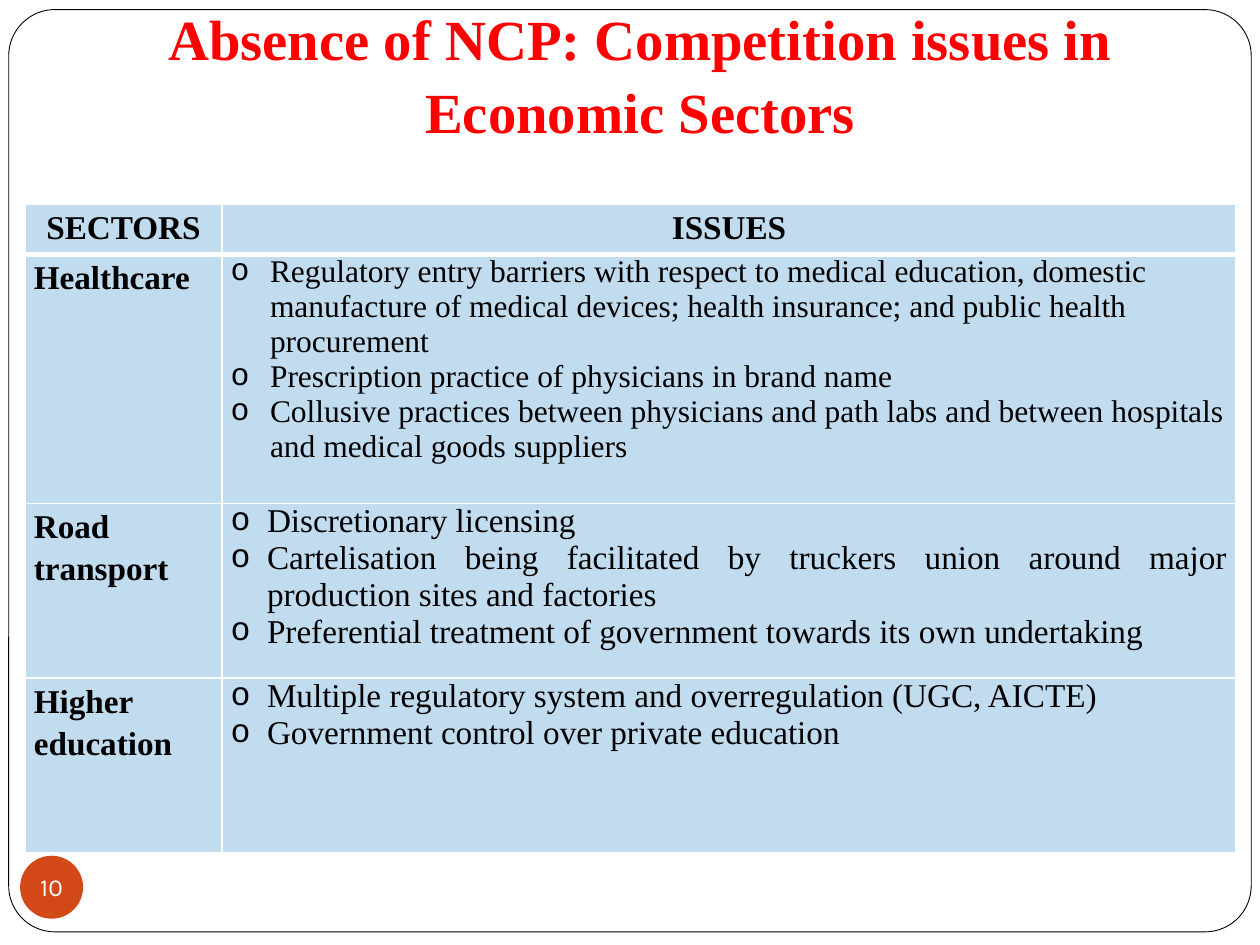
from dataclasses import dataclass

from lxml.etree import SubElement
from pptx import Presentation
from pptx.dml.color import RGBColor
from pptx.enum.shapes import MSO_SHAPE
from pptx.enum.text import MSO_ANCHOR, PP_ALIGN
from pptx.oxml import parse_xml
from pptx.oxml.ns import nsdecls, qn
from pptx.util import Pt


@dataclass(frozen=True)
class Theme:
    red: str = "FF0000"
    black: str = "000000"
    white: str = "FFFFFF"
    badge: str = "D34817"
    blue: str = "0070C0"
    tint: int = 24
    serif: str = "Times New Roman"
    sans: str = "Karla"
    mono: str = "Courier New"
    title: float = 32.4
    label: float = 19
    small: float = 18
    page: float = 14


THEME = Theme()
COLS = (112.4, 579.6)
ROWS = (28.8, 142, 100, 100)
HEADS = ("SECTORS", "ISSUES")
SECTORS = (
    ("Healthcare", THEME.small, 22.5, PP_ALIGN.LEFT, (
        "Regulatory entry barriers with respect to medical education, domestic "
        "manufacture of medical devices; health insurance; and public health "
        "procurement",
        "Prescription practice of physicians in brand name",
        "Collusive practices between physicians and path labs and between "
        "hospitals and medical goods suppliers",
    )),
    ("Road transport", THEME.label, 20.8, PP_ALIGN.JUSTIFY, (
        "Discretionary licensing",
        "Cartelisation being facilitated by truckers union around major "
        "production sites and factories",
        "Preferential treatment of government towards its own undertaking",
    )),
    ("Higher education", THEME.label, 20.8, PP_ALIGN.JUSTIFY, (
        "Multiple regulatory system and overregulation (UGC, AICTE)",
        "Government control over private education",
    )),
)


def color(code):
    return RGBColor.from_string(code)


def add_run(para, text, size, font=THEME.serif, ink=THEME.black, bold=False):
    run = para.add_run()
    run.text = text
    run.font.size = Pt(size)
    run.font.name = font
    run.font.bold = bold
    run.font.color.rgb = color(ink)


def set_frame(frame, pads, anchor, wrap):
    frame.margin_left, frame.margin_top = Pt(pads[0]), Pt(pads[1])
    frame.margin_right, frame.margin_bottom = Pt(pads[2]), Pt(pads[3])
    frame.vertical_anchor = anchor
    frame.word_wrap = wrap
    para = frame.paragraphs[0]
    para.alignment = PP_ALIGN.CENTER
    return para


def add_form(slide, kind, box, fill):
    form = slide.shapes.add_shape(kind, *map(Pt, box))
    form.shadow.inherit = False
    form.fill.solid()
    form.fill.fore_color.rgb = color(fill)
    form.line.fill.background()
    return form


def add_panel(slide):
    panel = add_form(slide, MSO_SHAPE.ROUNDED_RECTANGLE, (5, 5.5, 710, 527), THEME.white)
    panel.adjustments[0] = 0.05
    panel.line.color.rgb = color(THEME.black)
    panel.line.width = Pt(0.5)


def add_title(slide):
    box = slide.shapes.add_textbox(Pt(31), Pt(0), Pt(669.6), Pt(90))
    para = set_frame(box.text_frame, (7.2, 3.6, 7.2, 7.2), MSO_ANCHOR.BOTTOM, True)
    para.line_spacing = 1.08
    add_run(para, "Absence of NCP: Competition issues in Economic Sectors",
            THEME.title, ink=THEME.red, bold=True)


def add_badge(slide):
    badge = add_form(slide, MSO_SHAPE.OVAL, (11.5, 489, 36, 36), THEME.badge)
    para = set_frame(badge.text_frame, (0, 0, 0, 0), MSO_ANCHOR.MIDDLE, False)
    add_run(para, "10", THEME.page, THEME.sans, THEME.white)


def style_cell(cell, edges):
    cell.margin_left = cell.margin_right = Pt(5)
    cell.margin_top = cell.margin_bottom = Pt(0)
    cell.fill.solid()
    cell.fill.fore_color.rgb = color(THEME.blue)
    props = cell._tc.get_or_add_tcPr()
    tone = props.find(qn("a:solidFill")).find(qn("a:srgbClr"))
    SubElement(tone, qn("a:alpha")).set("val", str(THEME.tint * 1000))
    for spot, (side, width) in enumerate(edges.items()):
        props.insert(spot, parse_xml(
            f'<a:ln{side} {nsdecls("a")} w="{Pt(width)}"><a:solidFill>'
            f'<a:srgbClr val="{THEME.white}"/></a:solidFill></a:ln{side}>'))


def add_label(cell, text, align):
    para = cell.text_frame.paragraphs[0]
    para.alignment = align
    para.line_spacing = 1.15
    add_run(para, text, THEME.label, bold=True)


def add_points(cell, points, size, indent, align):
    frame = cell.text_frame
    for spot, point in enumerate(points):
        para = frame.add_paragraph() if spot else frame.paragraphs[0]
        para.alignment = align
        props = para._p.get_or_add_pPr()
        props.set("marL", str(Pt(indent)))
        props.set("indent", str(-Pt(indent)))
        SubElement(props, qn("a:buFont")).set("typeface", THEME.mono)
        SubElement(props, qn("a:buChar")).set("char", "o")
        add_run(para, point, size)


def add_grid(slide):
    table = slide.shapes.add_table(
        len(ROWS), len(COLS), Pt(14.4), Pt(116.8), Pt(sum(COLS)), Pt(sum(ROWS))).table
    for col, width in zip(table.columns, COLS):
        col.width = Pt(width)
    for spot, (row, height) in enumerate(zip(table.rows, ROWS)):
        row.height = Pt(height)
        top, base = (3 if spot == 1 else 1), (3 if spot == 0 else 1)
        for cell in row.cells:
            style_cell(cell, {"L": 1, "R": 1, "T": top, "B": base})
    for col, head in enumerate(HEADS):
        add_label(table.cell(0, col), head, PP_ALIGN.CENTER)
    for row, (name, size, indent, align, points) in enumerate(SECTORS, 1):
        add_label(table.cell(row, 0), name, PP_ALIGN.JUSTIFY)
        add_points(table.cell(row, 1), points, size, indent, align)


def main():
    deck = Presentation()
    deck.slide_width, deck.slide_height = Pt(720), Pt(540)
    slide = deck.slides.add_slide(deck.slide_layouts[6])
    add_panel(slide)
    add_title(slide)
    add_badge(slide)
    add_grid(slide)
    deck.save("out.pptx")


if __name__ == "__main__":
    main()
